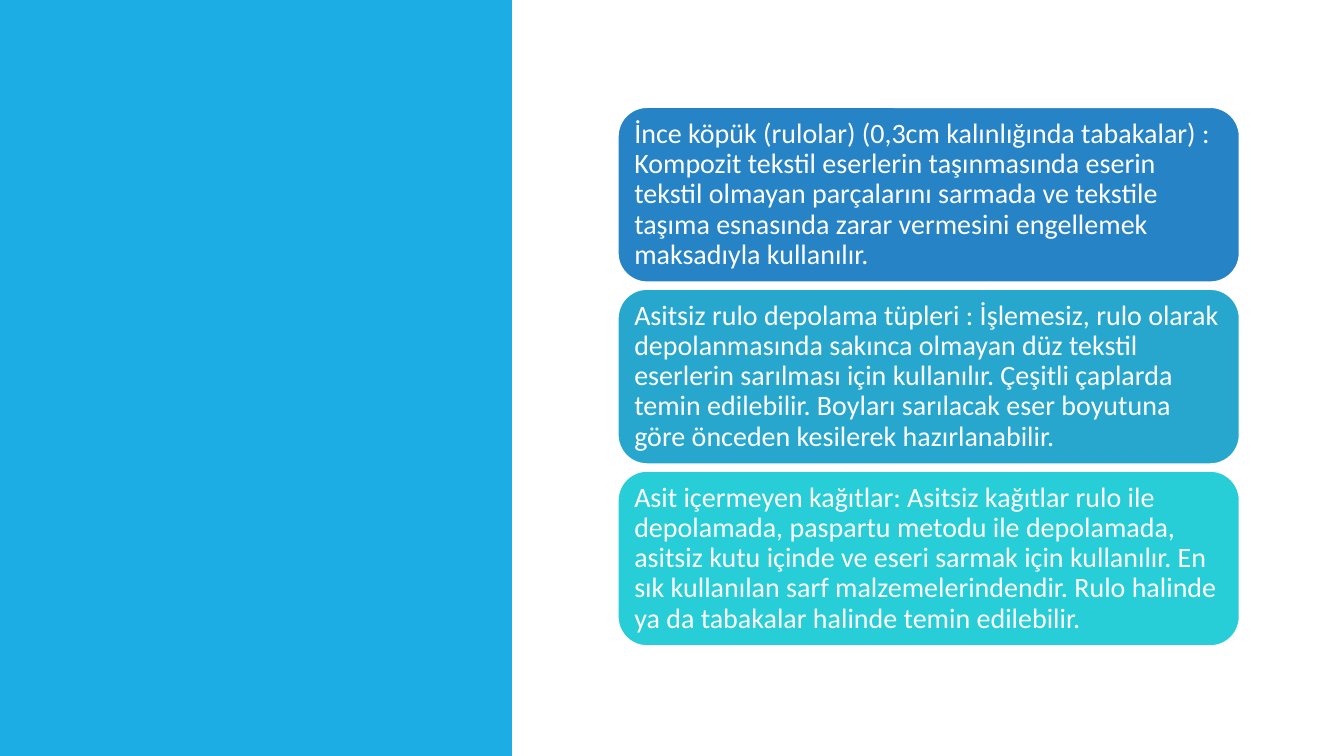
from dataclasses import dataclass

from pptx import Presentation
from pptx.dml.color import RGBColor
from pptx.enum.shapes import MSO_SHAPE
from pptx.enum.text import MSO_ANCHOR, PP_ALIGN
from pptx.util import Cm, Pt


@dataclass(frozen=True)
class Theme:
    panel: str = "1CADE4"
    cards: tuple = ("2683C6", "27A7CE", "27CED7")
    light: str = "FFFFFF"
    font: str = "Calibri"
    size: int = 20
    line: float = 1.25


THEME = Theme()
WIDTH, HEIGHT = 33.87, 19.05

NOTES = (
    "İnce köpük (rulolar) (0,3cm kalınlığında tabakalar) : Kompozit tekstil "
    "eserlerin taşınmasında eserin tekstil olmayan parçalarını sarmada ve "
    "tekstile taşıma esnasında zarar vermesini engellemek maksadıyla kullanılır.",
    "Asitsiz rulo depolama tüpleri : İşlemesiz, rulo olarak depolanmasında "
    "sakınca olmayan düz tekstil eserlerin sarılması için kullanılır. Çeşitli "
    "çaplarda temin edilebilir. Boyları sarılacak eser boyutuna göre önceden "
    "kesilerek hazırlanabilir.",
    "Asit içermeyen kağıtlar: Asitsiz kağıtlar rulo ile depolamada, paspartu "
    "metodu ile depolamada, asitsiz kutu içinde ve eseri sarmak için kullanılır. "
    "En sık kullanılan sarf malzemelerindendir. Rulo halinde ya da tabakalar "
    "halinde temin edilebilir.",
)


def add_block(slide, kind, box, color):
    """Add a flat filled shape; box is left, top, width, height in cm."""
    block = slide.shapes.add_shape(kind, *map(Cm, box))
    block.shadow.inherit = False
    block.fill.solid()
    block.fill.fore_color.rgb = RGBColor.from_string(color)
    return block


def add_panel(slide, box):
    panel = add_block(slide, MSO_SHAPE.RECTANGLE, box, THEME.panel)
    panel.line.fill.background()


def add_card(slide, box, color, text):
    card = add_block(slide, MSO_SHAPE.ROUNDED_RECTANGLE, box, color)
    card.line.color.rgb = RGBColor.from_string(THEME.light)
    card.line.width = Pt(THEME.line)

    # Text inside the card
    frame = card.text_frame
    frame.word_wrap = True
    frame.vertical_anchor = MSO_ANCHOR.MIDDLE
    frame.margin_left = frame.margin_right = Cm(0.2)
    frame.margin_top = frame.margin_bottom = Cm(0.2)
    para = frame.paragraphs[0]
    para.text = text
    para.alignment = PP_ALIGN.LEFT
    para.line_spacing = 0.9
    para.font.name = THEME.font
    para.font.size = Pt(THEME.size)
    para.font.color.rgb = RGBColor.from_string(THEME.light)


def add_stack(slide, box, gap=0.17):
    """Share the height of the box equally among the cards."""
    left, top, width, height = box
    pitch = (height + gap) / len(NOTES)
    for row, (color, text) in enumerate(zip(THEME.cards, NOTES)):
        place = (left, top + row * pitch, width, pitch - gap)
        add_card(slide, place, color, text)


def main():
    deck = Presentation()
    deck.slide_width, deck.slide_height = Cm(WIDTH), Cm(HEIGHT)
    slide = deck.slides.add_slide(deck.slide_layouts[6])

    # Colour panel on the left, cards on the right
    add_panel(slide, (0, 0, 12.9, HEIGHT))
    add_stack(slide, (15.57, 2.7, 15.67, 13.58))

    deck.save("out.pptx")


if __name__ == "__main__":
    main()
